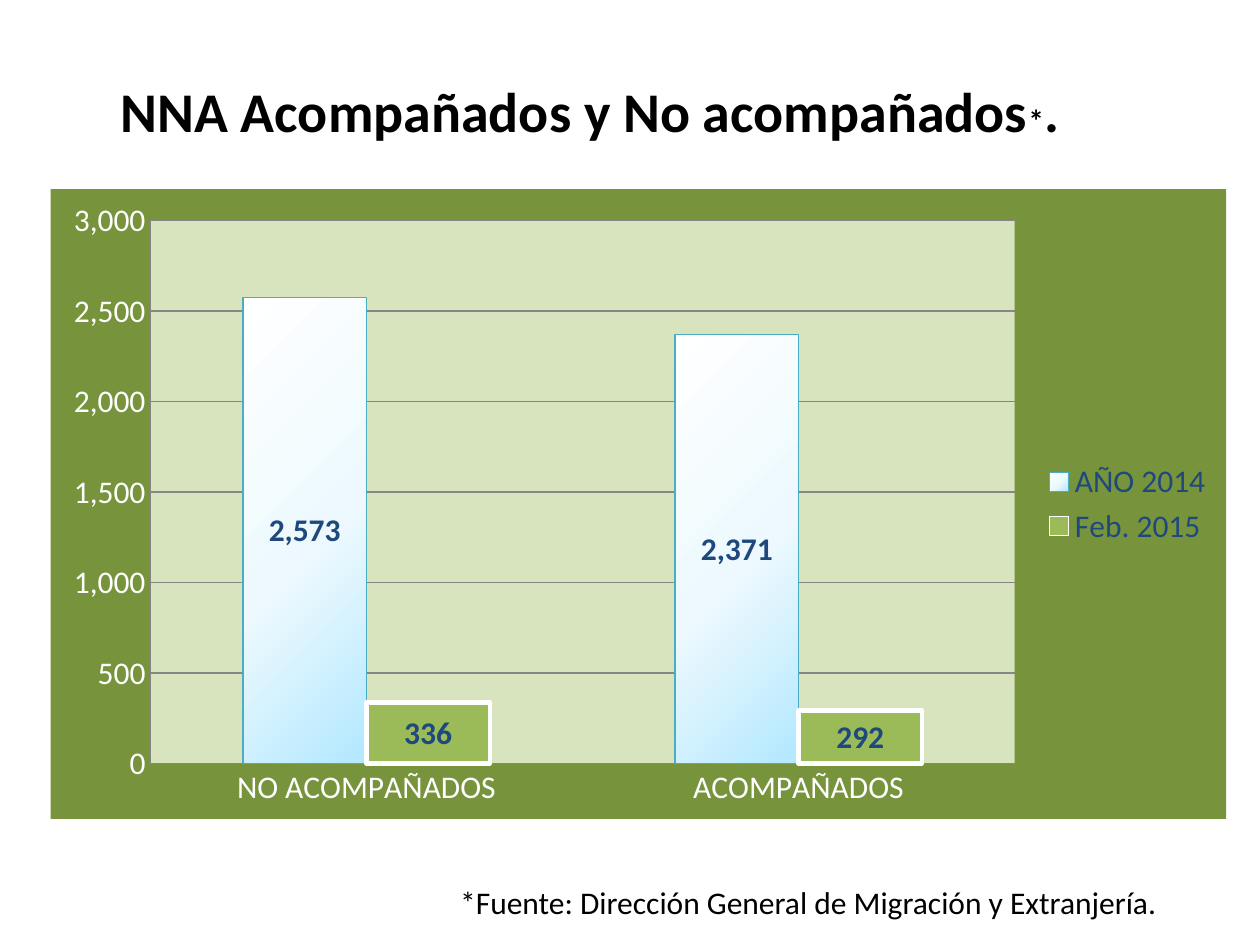
from dataclasses import dataclass

from lxml.etree import fromstring
from pptx import Presentation
from pptx.chart.data import CategoryChartData
from pptx.dml.color import RGBColor
from pptx.enum.chart import (XL_CHART_TYPE, XL_LABEL_POSITION,
                             XL_LEGEND_POSITION, XL_TICK_MARK)
from pptx.enum.text import PP_ALIGN
from pptx.util import Cm, Pt


@dataclass(frozen=True)
class Theme:
    font: str = "Calibri"
    title_size: int = 32
    body_size: int = 18
    text: str = "000000"
    light: str = "FFFFFF"
    navy: str = "1F497D"
    frame: str = "77933C"
    plot: str = "D7E4BD"
    grid: str = "868686"
    year_line: str = "4BACC6"
    month_fill: str = "9BBB59"
    year_stops: tuple = ((0, "FEFFFF"), (55, "EDF9FE"), (100, "B2E8FF"))


THEME = Theme()
CATEGORIES = ("NO ACOMPAÑADOS", "ACOMPAÑADOS")
SERIES = {"AÑO 2014": (2573, 2371), "Feb. 2015": (336, 292)}
NUMBER_FORMAT = "#,##0"
NAMESPACES = ('xmlns:a="http://schemas.openxmlformats.org/drawingml/2006/main" '
              'xmlns:c="http://schemas.openxmlformats.org/drawingml/2006/chart"')


def set_attributes(target, **values):
    for name, value in values.items():
        setattr(target, name, value)


def set_font(font, color, size=THEME.body_size, bold=False):
    set_attributes(font, name=THEME.font, size=Pt(size), bold=bold)
    font.color.rgb = RGBColor.from_string(color)


def set_line(line, color, width=0.75):
    line.color.rgb = RGBColor.from_string(color)
    line.width = Pt(width)


def make_element(markup):
    """Parse chart markup, declaring its namespaces on the first tag."""
    tag, rest = markup.split(">", 1)
    return fromstring(f"{tag} {NAMESPACES}>{rest}")


def solid_area(color):
    return make_element(f'<c:spPr><a:solidFill><a:srgbClr val="{color}"/>'
                        '</a:solidFill><a:ln><a:noFill/></a:ln></c:spPr>')


def add_text(page, place, spans, align=PP_ALIGN.LEFT, spacing=1.0, bold=False):
    """Add one paragraph made of (text, size) spans."""
    box = page.shapes.add_textbox(*map(Cm, place))
    box.text_frame.word_wrap = True
    para = box.text_frame.paragraphs[0]
    set_attributes(para, alignment=align, line_spacing=spacing)
    for text, size in spans:
        span = para.add_run()
        span.text = text
        set_font(span.font, THEME.text, size, bold)


def style_axes(chart):
    for axis in (chart.category_axis, chart.value_axis):
        set_attributes(axis, major_tick_mark=XL_TICK_MARK.NONE,
                       minor_tick_mark=XL_TICK_MARK.NONE)
        set_font(axis.tick_labels.font, THEME.light)
        set_line(axis.format.line, THEME.grid)
    axis = chart.value_axis
    set_attributes(axis, has_major_gridlines=True, minimum_scale=0,
                   maximum_scale=3000, major_unit=500)
    set_line(axis.major_gridlines.format.line, THEME.grid)
    set_attributes(axis.tick_labels, number_format=NUMBER_FORMAT,
                   number_format_is_linked=False)


def style_series(series, color, line_color, line_width):
    series.format.fill.solid()
    series.format.fill.fore_color.rgb = RGBColor.from_string(color)
    set_line(series.format.line, line_color, line_width)
    labels = series.data_labels
    set_attributes(labels, show_value=True, position=XL_LABEL_POSITION.CENTER,
                   number_format=NUMBER_FORMAT, number_format_is_linked=False)
    set_font(labels.font, THEME.navy, bold=True)


def apply_glow(series):
    """Swap the solid fill of a series for a circular gradient."""
    stops = "".join(f'<a:gs pos="{place * 1000}"><a:srgbClr val="{color}"/></a:gs>'
                    for place, color in THEME.year_stops)
    gradient = make_element(
        f'<a:gradFill><a:gsLst>{stops}</a:gsLst><a:path path="circle">'
        '<a:fillToRect l="-40000" t="-90000" r="140000" b="190000"/>'
        '</a:path></a:gradFill>')
    solid = series._element.find("{*}spPr/{*}solidFill")
    solid.getparent().replace(solid, gradient)


def style_areas(chart):
    """Fill the chart frame and the plot, and fix the inner plot position."""
    frame = chart._chartSpace.find("{*}chart")
    frame.addnext(solid_area(THEME.frame))
    plot_area = frame.find("{*}plotArea")
    plot_area.append(solid_area(THEME.plot))
    for layout in plot_area.findall("{*}layout"):
        plot_area.remove(layout)
    modes = "".join(f'<c:{name} val="{value}"/>' for name, value in (
        ("layoutTarget", "inner"), ("xMode", "edge"), ("yMode", "edge"),
        ("x", 0.085), ("y", 0.05), ("w", 0.735), ("h", 0.862)))
    plot_area.insert(0, make_element(
        f"<c:layout><c:manualLayout>{modes}</c:manualLayout></c:layout>"))


def add_column_chart(page, place):
    table = CategoryChartData(number_format=NUMBER_FORMAT)
    table.categories = CATEGORIES
    for name, values in SERIES.items():
        table.add_series(name, values)
    chart = page.shapes.add_chart(XL_CHART_TYPE.COLUMN_CLUSTERED,
                                  *map(Cm, place), table).chart
    set_attributes(chart, has_title=False, has_legend=True)
    set_font(chart.font, THEME.text)
    set_attributes(chart.legend, position=XL_LEGEND_POSITION.RIGHT,
                   include_in_layout=False)
    set_font(chart.legend.font, THEME.navy)
    plot = chart.plots[0]
    set_attributes(plot, gap_width=150, overlap=0, vary_by_categories=False)
    style_axes(chart)
    year, month = plot.series
    style_series(year, THEME.light, THEME.year_line, 0.75)
    apply_glow(year)
    style_series(month, THEME.month_fill, THEME.light, 2.5)
    style_areas(chart)


def main():
    deck = Presentation()
    set_attributes(deck, slide_width=Cm(25.4), slide_height=Cm(19.05))
    page = deck.slides.add_slide(deck.slide_layouts[6])
    add_text(page, (2.18, 1.22, 20.62, 1.83),
             (("NNA Acompañados y No acompañados", THEME.title_size),
              ("*", THEME.body_size), (".", THEME.title_size)),
             spacing=1.15, bold=True)
    add_column_chart(page, (1.02, 3.81, 23.7, 12.7))
    add_text(page, (8.86, 17.68, 14.71, 1.02),
             (("*Fuente: Dirección General de Migración y Extranjería.",
               THEME.body_size),), align=PP_ALIGN.RIGHT)
    deck.save("out.pptx")


if __name__ == "__main__":
    main()
